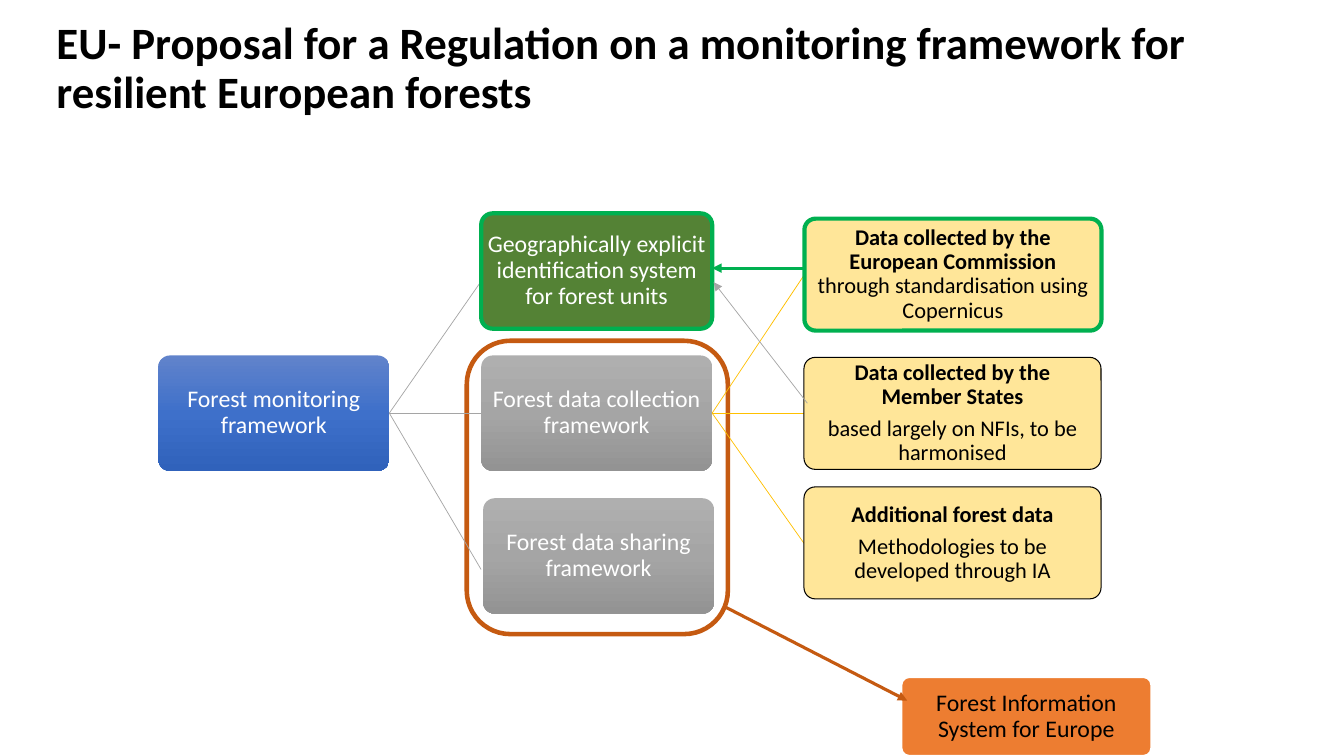
from copy import deepcopy
from lxml.etree import SubElement
from pptx import Presentation
from pptx.dml.color import RGBColor
from pptx.enum.shapes import MSO_CONNECTOR, MSO_SHAPE
from pptx.enum.text import MSO_ANCHOR, MSO_AUTO_SIZE, PP_ALIGN
from pptx.oxml.ns import qn
from pptx.util import Pt

BLACK, WHITE = RGBColor(0, 0, 0), RGBColor(255, 255, 255)
FOREST, GREEN = RGBColor(0x54, 0x82, 0x35), RGBColor(0x00, 0xB0, 0x50)
SAND, GOLD = RGBColor(0xFF, 0xE6, 0x99), RGBColor(0xFF, 0xC0, 0x00)
ORANGE, RUST = RGBColor(0xED, 0x7D, 0x31), RGBColor(0xC5, 0x5A, 0x11)
GREY = RGBColor(0xA5, 0xA5, 0xA5)
BLUES = [RGBColor(0x61, 0x83, 0xCB), RGBColor(0x3E, 0x70, 0xCA), RGBColor(0x30, 0x62, 0xBB)]
GREYS = [RGBColor(0xAF, 0xAF, 0xAF), GREY, RGBColor(0x93, 0x93, 0x93)]
FONT = "Calibri"

TITLE = "EU- Proposal for a Regulation on a monitoring framework for resilient European forests"

# Box sizes and column edges
MAIN, DATA, SYSTEM = (165, 82.4), (212.2, 80), (178.6, 56.4)
ROOT_X, PART_X, DATA_X = 113.1, 343.7, 574.3
MID_Y = 295.1

# Each paragraph is a list of (text, bold) runs; \v breaks a line
# left, top, size, fill, (line colour, width), font size, font colour, paragraphs
BOXES = [
    (ROOT_X, 253.9, MAIN, BLUES, None, 17, WHITE, [[("Forest monitoring framework", False)]]),
    (PART_X, 152.4, MAIN, FOREST, (GREEN, 3), 17, WHITE,
     [[("Geographically explicit identification system for forest units", False)]]),
    (PART_X, 253.9, MAIN, GREYS, None, 17, WHITE, [[("Forest data collection framework", False)]]),
    (345.1, 355.9, MAIN, GREYS, None, 17, WHITE, [[("Forest data sharing framework", False)]]),
    (574.6, 156.2, DATA, SAND, (GREEN, 3), 16, BLACK,
     [[("Data collected by the\vEuropean Commission\v", True),
       ("through standardisation using Copernicus", False)]]),
    (DATA_X, 255.3, DATA, SAND, (BLACK, 0.75), 16, BLACK,
     [[("Data collected by the\vMember States", True)],
      [("based largely on NFIs, to be harmonised", False)]]),
    (DATA_X, 347.8, DATA, SAND, (BLACK, 0.75), 16, BLACK,
     [[("Additional forest data", True)],
      [("Methodologies to be developed through IA", False)]]),
    (643.8, 483.6, SYSTEM, ORANGE, (WHITE, 1.5), 17, BLACK,
     [[("Forest Information System for Europe", False)]]),
]

# Branches: start x, end x, end heights, colour
BRANCHES = [
    (ROOT_X + MAIN[0], PART_X, [200.9, MID_Y, 406.8], GREY),
    (PART_X + MAIN[0], DATA_X, [196.6, MID_Y, 388.1], GOLD),
]

# Arrows: start, end, colour, width
ARROWS = [
    ((517.7, 433.4), (648, 500.4), RUST, 2.25),
    ((DATA_X, 191.5), (508.7, 191.5), GREEN, 2.25),
    ((576.7, 288), (509.8, 201.6), GREY, 0.5),
]


def add_box(left, top, size, fill, line, radius):
    sp = s.shapes.add_shape(MSO_SHAPE.ROUNDED_RECTANGLE, Pt(left), Pt(top), Pt(size[0]), Pt(size[1]))
    sp.adjustments[0] = radius
    sp.shadow.inherit = False
    if isinstance(fill, list):
        sp.fill.gradient()
        sp.fill.gradient_angle = 270
        stops = sp._element.spPr.find(".//" + qn("a:gsLst"))
        stops.insert(1, deepcopy(stops[0]))
        for stop, color, position in zip(sp.fill.gradient_stops, fill, (0, 0.5, 1)):
            stop.color.rgb = color
            stop.position = position
    else:
        sp.fill.solid()
        sp.fill.fore_color.rgb = fill
    if line:
        sp.line.color.rgb, sp.line.width = line[0], Pt(line[1])
    else:
        sp.line.fill.background()
    return sp


def write(tf, paragraphs, size, color):
    tf.word_wrap = True
    tf.vertical_anchor = MSO_ANCHOR.MIDDLE
    tf.margin_left = tf.margin_right = tf.margin_top = tf.margin_bottom = Pt(1)
    for i, parts in enumerate(paragraphs):
        p = tf.add_paragraph() if i else tf.paragraphs[0]
        p.alignment = PP_ALIGN.CENTER
        p.line_spacing = 0.9
        if i:
            p.space_before = Pt(5.6)
        for text, bold in parts:
            for j, piece in enumerate(text.split("\v")):
                if j:
                    p.add_line_break()
                if piece:
                    r = p.add_run()
                    r.text = piece
                    r.font.name, r.font.size, r.font.bold = FONT, Pt(size), bold
                    r.font.color.rgb = color
        for br in p._p.findall(qn("a:br")):
            SubElement(br, qn("a:rPr"), sz=str(size * 100))


def add_line(start, end, color, width, arrow=False):
    c = s.shapes.add_connector(MSO_CONNECTOR.STRAIGHT, *(Pt(v) for v in start + end))
    c.line.color.rgb, c.line.width = color, Pt(width)
    if arrow:
        SubElement(c.line._get_or_add_ln(), qn("a:tailEnd"), type="triangle")
    SubElement(c._element.spPr, qn("a:effectLst"))


prs = Presentation()
prs.slide_width, prs.slide_height = Pt(960), Pt(540)
s = prs.slides.add_slide(prs.slide_layouts[5])

# Title
title = s.shapes.title
title.left, title.top, title.width, title.height = Pt(33.1), Pt(11.5), Pt(828), Pt(62)
tf = title.text_frame
tf.text = TITLE
tf.word_wrap = True
tf.auto_size = MSO_AUTO_SIZE.NONE
tf.vertical_anchor = MSO_ANCHOR.TOP
p = tf.paragraphs[0]
p.alignment = PP_ALIGN.LEFT
p.line_spacing = 0.9
font = p.runs[0].font
font.name, font.size, font.bold = FONT, Pt(32), True
font.color.rgb = BLACK

# Frame around the two data frameworks
add_box(333.4, 243.4, (186.5, 209.5), WHITE, (RUST, 3.25), 0.1667)

# Branches, boxes and arrows
for x1, x2, ends, color in BRANCHES:
    for y in ends:
        add_line((x1, MID_Y), (x2, y), color, 0.5)
for left, top, size, fill, line, font_size, color, paragraphs in BOXES:
    write(add_box(left, top, size, fill, line, 0.1).text_frame, paragraphs, font_size, color)
for start, end, color, width in ARROWS:
    add_line(start, end, color, width, arrow=True)

prs.save("out.pptx")
